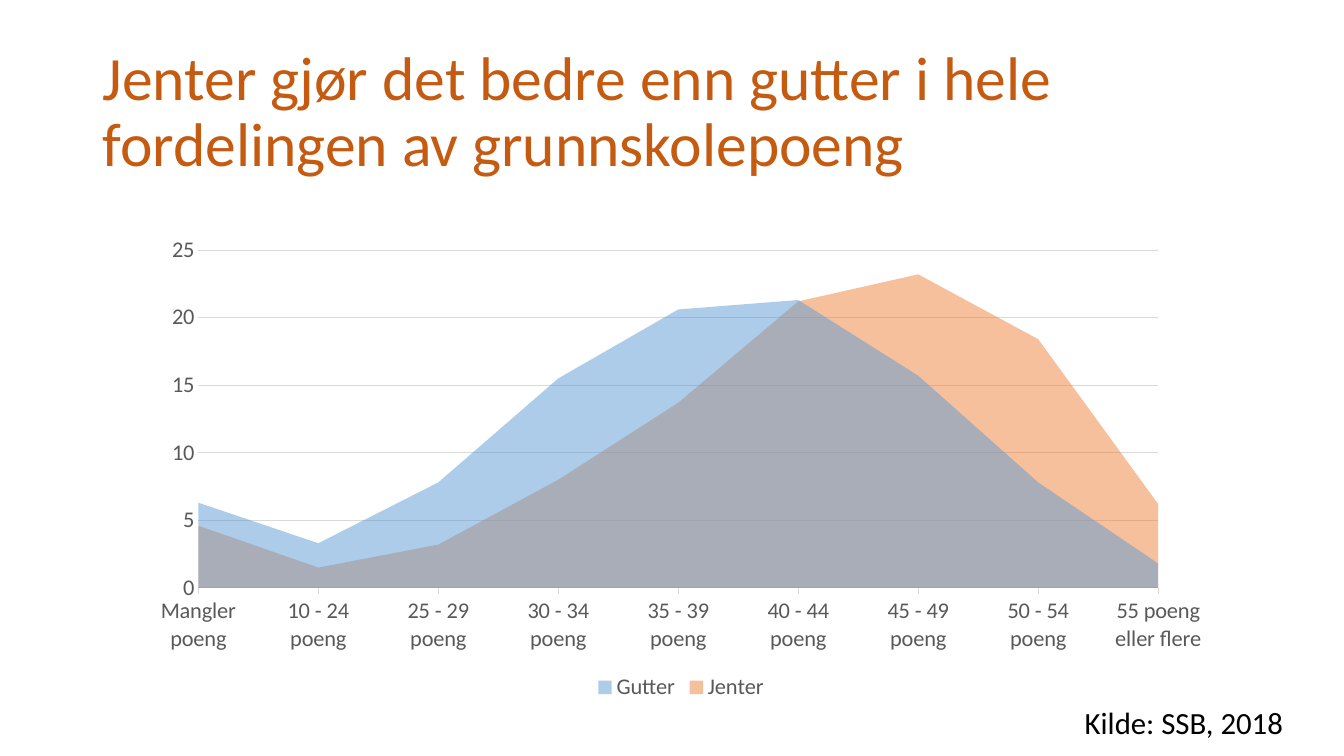
from lxml import etree
from pptx import Presentation
from pptx.chart.data import CategoryChartData
from pptx.dml.color import RGBColor
from pptx.enum.chart import XL_CHART_TYPE, XL_LEGEND_POSITION, XL_TICK_MARK
from pptx.enum.text import MSO_ANCHOR
from pptx.oxml.ns import qn
from pptx.util import Inches, Pt

AREA = XL_CHART_TYPE.AREA
LEGEND_BOTTOM = XL_LEGEND_POSITION.BOTTOM
TICK_NONE, TICK_OUT = XL_TICK_MARK.NONE, XL_TICK_MARK.OUTSIDE
TOP, MIDDLE = MSO_ANCHOR.TOP, MSO_ANCHOR.MIDDLE

FONT = "Calibri"
LABEL_GREY, LINE_GREY = "595959", "D9D9D9"
POINT_BANDS = ["Mangler poeng"] + [
    f"{band} poeng"
    for band in ("10 - 24", "25 - 29", "30 - 34", "35 - 39", "40 - 44", "45 - 49", "50 - 54")
] + ["55 poeng eller flere"]
PUPILS = [
    ("Gutter", "5B9BD5", 50, (6.3, 3.3, 7.8, 15.5, 20.6, 21.3, 15.7, 7.8, 1.8)),
    ("Jenter", "ED7D31", 48, (4.6, 1.5, 3.2, 8, 13.7, 21.2, 23.2, 18.4, 6.2)),
]


def color(hex_code):
    """Return the colour for a hex string."""
    return RGBColor.from_string(hex_code)


def style_font(font, size, hex_code):
    """Set typeface, size and colour of a font."""
    font.name = FONT
    font.size = Pt(size)
    font.color.rgb = color(hex_code)


def style_line(line):
    """Make a line thin and light grey."""
    line.color.rgb = color(LINE_GREY)
    line.width = Pt(0.75)


def add_text(slide, box, text, size, hex_code, anchor=TOP, spacing=1.0):
    """Place one paragraph of wrapped text in a box."""
    frame = slide.shapes.add_textbox(*map(Inches, box)).text_frame
    frame.word_wrap = True
    frame.vertical_anchor = anchor
    paragraph = frame.paragraphs[0]
    paragraph.line_spacing = spacing
    run = paragraph.add_run()
    run.text = text
    style_font(run.font, size, hex_code)


def style_axes(chart):
    """Style both axes and start the areas on the value axis."""
    bands, share = chart.category_axis, chart.value_axis
    for axis, tick in ((bands, TICK_OUT), (share, TICK_NONE)):
        style_font(axis.tick_labels.font, 16, LABEL_GREY)
        axis.major_tick_mark = tick
        axis.minor_tick_mark = TICK_NONE
    bands.has_major_gridlines = False
    style_line(bands.format.line)
    share.minimum_scale, share.maximum_scale, share.major_unit = 0, 25, 5
    share.has_major_gridlines = True
    style_line(share.major_gridlines.format.line)
    share.format.line.fill.background()
    share.tick_labels.number_format = "General"
    share.tick_labels.number_format_is_linked = False
    for crossing in chart.element.iter(qn("c:crossBetween")):
        crossing.set("val", "midCat")


def add_distribution(slide, box):
    """Place the area chart of school points in a box."""
    data = CategoryChartData(number_format="General")
    data.categories = POINT_BANDS
    for name, _, _, shares in PUPILS:
        data.add_series(name, shares)
    chart = slide.shapes.add_chart(AREA, *map(Inches, box), data).chart
    style_font(chart.font, 10, "000000")
    chart.has_title = False
    chart.has_legend = True
    chart.legend.position = LEGEND_BOTTOM
    chart.legend.include_in_layout = False
    style_font(chart.legend.font, 16, LABEL_GREY)
    style_axes(chart)
    plot = chart.plots[0]
    plot.vary_by_categories = False
    for series, (_, hex_code, opacity, _) in zip(plot.series, PUPILS):
        series.format.fill.solid()
        series.format.fill.fore_color.rgb = color(hex_code)
        series.format.line.fill.background()
        for fill_color in series.format.fill._xPr.iter(qn("a:srgbClr")):
            etree.SubElement(fill_color, qn("a:alpha")).set("val", str(opacity * 1000))


def main():
    """Build and save the slide."""
    deck = Presentation()
    deck.slide_width, deck.slide_height = Inches(13.33), Inches(7.5)
    slide = deck.slides.add_slide(deck.slide_layouts[6])
    add_text(slide, (0.92, 0.4, 11.5, 1.45),
             "Jenter gjør det bedre enn gutter i hele fordelingen av grunnskolepoeng",
             44, "C55A11", MIDDLE, 0.9)
    add_distribution(slide, (1.38, 2.25, 10.75, 4.75))
    add_text(slide, (10.66, 6.93, 2.58, 0.47), "Kilde: SSB, 2018", 22, "000000")
    deck.save("out.pptx")


if __name__ == "__main__":
    main()
